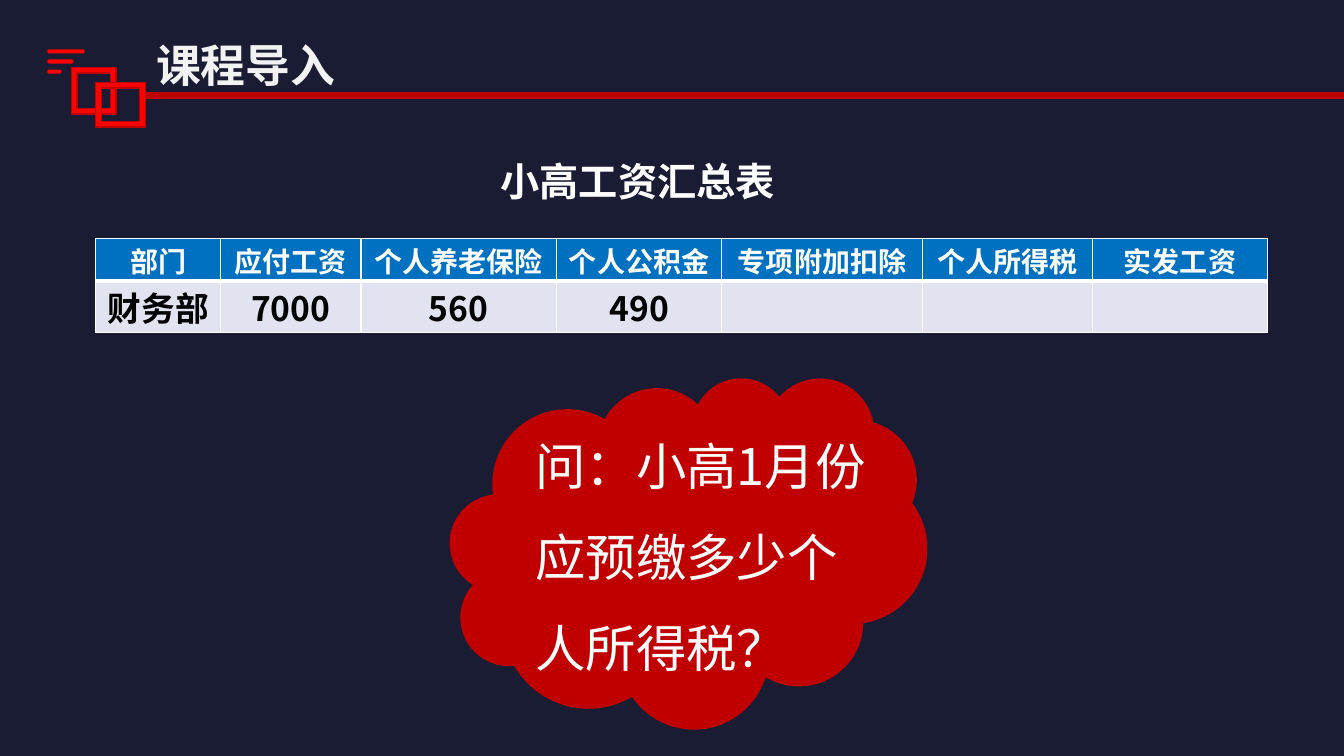
from pptx import Presentation
from pptx.dml.color import RGBColor
from pptx.enum.shapes import MSO_CONNECTOR, MSO_SHAPE
from pptx.enum.text import MSO_ANCHOR, PP_ALIGN
from pptx.oxml import parse_xml
from pptx.oxml.ns import nsdecls
from pptx.util import Inches, Pt

CENTER = PP_ALIGN.CENTER
MIDDLE, TOP = MSO_ANCHOR.MIDDLE, MSO_ANCHOR.TOP
CLOUD, FRAME, BAR = MSO_SHAPE.CLOUD, MSO_SHAPE.FRAME, MSO_SHAPE.ROUNDED_RECTANGLE
STRAIGHT = MSO_CONNECTOR.STRAIGHT
CHINESE_FONT = "Noto Sans CJK SC"


def color(hex_string):
    return RGBColor.from_string(hex_string)


def format_text(paragraph, size, hex_string, bold=False, font_name=CHINESE_FONT):
    for run in paragraph.runs:
        run.font.size = Pt(size)
        run.font.bold = bold
        run.font.name = font_name
        run.font.color.rgb = color(hex_string)
        run.font._element.find("{*}latin").addnext(
            parse_xml(f'<a:ea {nsdecls("a")} typeface="{CHINESE_FONT}"/>'))


presentation = Presentation()
presentation.slide_width = Inches(13.33)
presentation.slide_height = Inches(7.5)
slide = presentation.slides.add_slide(presentation.slide_layouts[6])
slide.background.fill.solid()
slide.background.fill.fore_color.rgb = color("1A1C33")

# Title ornament and question cloud: kind, left, top, width, height, line, line width
shapes = [(BAR, 0.48, 0.5 + 0.1 * row, width, 0.02, "FF0000", 1.5)
          for row, width in enumerate([0.35, 0.24, 0.12])]
shapes += [
    (CLOUD, 4.47, 3.75, 4.72, 3.47, "BF0000", 1),
    (FRAME, 0.71, 0.67, 0.44, 0.46, "BF0000", 1),
    (FRAME, 0.95, 0.82, 0.49, 0.44, "BF0000", 1),
]
for kind, left, top, width, height, line_color, line_width in shapes:
    shape = slide.shapes.add_shape(
        kind, Inches(left), Inches(top), Inches(width), Inches(height))
    shape.shadow.inherit = False
    shape.fill.solid()
    shape.fill.fore_color.rgb = color("C00000" if kind == CLOUD else "FF0000")
    shape.line.color.rgb = color(line_color)
    shape.line.width = Pt(line_width)
    if kind == BAR:
        shape.adjustments[0] = 0.5

# Rule under the title
rule = slide.shapes.add_connector(
    STRAIGHT, Inches(1.45), Inches(0.95), Inches(13.33), Inches(0.95))
rule.line.color.rgb = color("BD0000")
rule.line.width = Pt(5)
rule._element.spPr.append(parse_xml(f'<a:effectLst {nsdecls("a")}/>'))

# Title, table heading and question
texts = [
    ("课程导入", 1.45, 0.33, 4.44, 0.64, 32, "F2F2F2", True, "Arial", None, None),
    ("小高工资汇总表", 1.71, 1.51, 9.23, 0.57, 28, "FFFFFF", True, CHINESE_FONT, CENTER, None),
    ("问：小高1月份应预缴多少个人所得税？", 5.21, 3.97, 3.59, 2.83, 36, "FFFFFF", False,
     CHINESE_FONT, None, 1.5),
]
for text, left, top, width, height, size, text_color, bold, font_name, align, spacing in texts:
    text_box = slide.shapes.add_textbox(
        Inches(left), Inches(top), Inches(width), Inches(height))
    text_box.text_frame.word_wrap = True
    text_box.text_frame.text = text
    paragraph = text_box.text_frame.paragraphs[0]
    paragraph.alignment = align
    paragraph.line_spacing = spacing
    format_text(paragraph, size, text_color, bold, font_name)

# Salary table
column_widths = [1.24, 1.39, 1.94, 1.64, 1.99, 1.69, 1.73]
row_heights = [0.42, 0.51]
salary_rows = [
    ["部门", "应付工资", "个人养老保险", "个人公积金", "专项附加扣除", "个人所得税", "实发工资"],
    ["财务部", "7000", "560", "490", "", "", ""],
]
# Fill, text colour, text size, anchor, widths of the left, right, top and bottom borders
row_styles = [
    ("0070C0", "FFFFFF", 20, MIDDLE, (1, 1, 1, 3)),
    ("E2E3F0", "000000", 24, TOP, (1, 1, 3, 1)),
]
table = slide.shapes.add_table(
    len(salary_rows), len(column_widths), Inches(0.95), Inches(2.37),
    Inches(sum(column_widths)), Inches(sum(row_heights))).table
for column, width in zip(table.columns, column_widths):
    column.width = Inches(width)
for row, height, values, style in zip(table.rows, row_heights, salary_rows, row_styles):
    row.height = Inches(height)
    fill_color, text_color, size, anchor, border_widths = style
    for cell, value in zip(row.cells, values):
        cell.fill.solid()
        cell.fill.fore_color.rgb = color(fill_color)
        cell.vertical_anchor = anchor
        cell.margin_left = cell.margin_right = cell.margin_top = Inches(0.01)
        cell.margin_bottom = Inches(0)
        cell.text_frame.text = value
        paragraph = cell.text_frame.paragraphs[0]
        paragraph.alignment = CENTER
        format_text(paragraph, size, text_color, True)
        properties = cell._tc.get_or_add_tcPr()
        for position, (side, width) in enumerate(zip("LRTB", border_widths)):
            properties.insert(position, parse_xml(
                f'<a:ln{side} {nsdecls("a")} w="{Pt(width)}"><a:solidFill>'
                f'<a:srgbClr val="FFFFFF"/></a:solidFill></a:ln{side}>'))

presentation.save("out.pptx")
